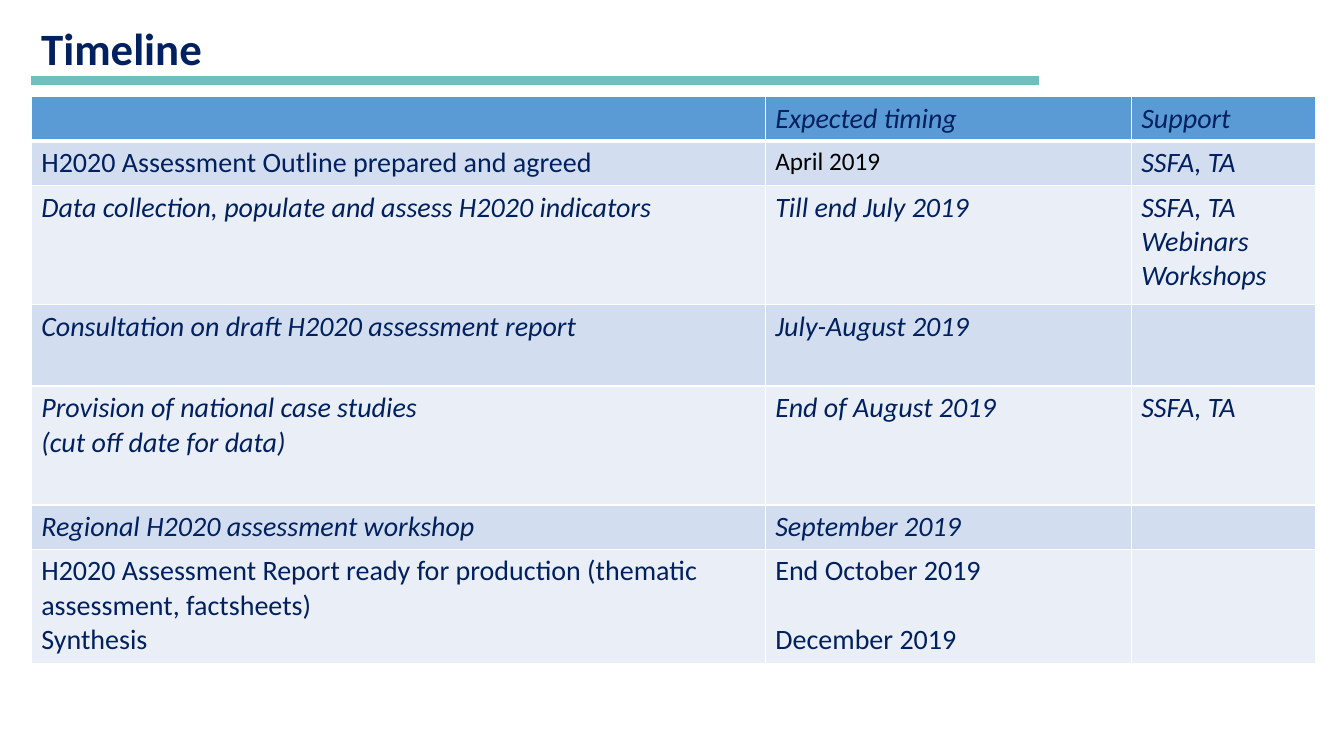
from lxml import etree
from pptx import Presentation
from pptx.dml.color import RGBColor
from pptx.enum.shapes import MSO_CONNECTOR
from pptx.oxml.ns import qn
from pptx.util import Inches, Pt

STRAIGHT = MSO_CONNECTOR.STRAIGHT
FONT = "Calibri"
COLORS = {
    "navy": "002060",
    "teal": "6FBFBD",
    "head": "5B9BD5",
    "dark": "D2DEEF",
    "light": "EAEFF7",
    "black": "000000",
    "white": "FFFFFF",
}
WIDTHS = [7.28, 3.63, 1.83]
HEIGHTS = [0.44, 0.44, 1.18, 0.81, 1.18, 0.44, 1.13]
ROWS = [
    ["", "Expected timing", "Support"],
    ["H2020 Assessment Outline prepared and agreed", "April 2019", "SSFA, TA"],
    ["Data collection, populate and assess H2020 indicators",
     "Till end July 2019", "SSFA, TA\nWebinars\nWorkshops"],
    ["Consultation on draft H2020 assessment report", "July-August 2019", ""],
    ["Provision of national case studies\n(cut off date for data)",
     "End of August 2019", "SSFA, TA"],
    ["Regional H2020 assessment workshop", "September 2019", ""],
    ["H2020 Assessment Report ready for production "
     "(thematic assessment, factsheets)\nSynthesis",
     "End October 2019\nDecember 2019", ""],
]
UPRIGHT = {(1, 0), (1, 1), (6, 0), (6, 1)}


def color(name):
    return RGBColor.from_string(COLORS[name])


def style(par, size, tint="navy", bold=False, italic=False):
    font = par.font
    font.name = FONT
    font.size = Pt(size)
    font.bold = bold
    font.italic = italic
    font.color.rgb = color(tint)


def add_title(slide, text):
    box = slide.shapes.add_textbox(
        Inches(0.31), Inches(0.22), Inches(12.44), Inches(0.58))
    box.text_frame.word_wrap = True
    par = box.text_frame.paragraphs[0]
    par.text = text
    par.line_spacing = 0.9
    style(par, 32, bold=True)


def add_rule(slide):
    rule = slide.shapes.add_connector(
        STRAIGHT, Inches(0.31), Inches(0.8), Inches(10.31), Inches(0.8))
    rule.line.color.rgb = color("teal")
    rule.line.width = Pt(6)
    etree.SubElement(rule._element.spPr, qn("a:effectLst"))


def add_edges(cell, base):
    props = cell._tc.get_or_add_tcPr()
    widths = {"lnL": 1, "lnR": 1, "lnT": 1, "lnB": base}
    for place, (tag, width) in enumerate(widths.items()):
        edge = etree.Element(qn(f"a:{tag}"), w=str(Pt(width)))
        fill = etree.SubElement(edge, qn("a:solidFill"))
        etree.SubElement(fill, qn("a:srgbClr"), val=COLORS["white"])
        props.insert(place, edge)


def fill_cell(cell, text, shade, size, tint, italic):
    cell.fill.solid()
    cell.fill.fore_color.rgb = color(shade)
    cell.text = text
    for par in cell.text_frame.paragraphs:
        style(par, size, tint, italic=italic)
    add_edges(cell, 3 if shade == "head" else 1)


def add_plan(slide):
    frame = slide.shapes.add_table(
        len(ROWS), len(WIDTHS), Inches(0.31), Inches(0.96),
        Inches(sum(WIDTHS)), Inches(sum(HEIGHTS)))
    table = frame.table
    table.first_row = False
    table.horz_banding = False
    for col, width in zip(table.columns, WIDTHS):
        col.width = Inches(width)
    for row, height in zip(table.rows, HEIGHTS):
        row.height = Inches(height)
    for r, texts in enumerate(ROWS):
        shade = "head" if r == 0 else ("light", "dark")[r % 2]
        for c, text in enumerate(texts):
            size, tint = (18, "black") if (r, c) == (1, 1) else (20, "navy")
            fill_cell(table.cell(r, c), text, shade, size, tint,
                      (r, c) not in UPRIGHT)
    table.cell(6, 1).text_frame.paragraphs[1].space_before = Pt(24.4)


def main():
    deck = Presentation()
    deck.slide_width = Inches(13.33)
    deck.slide_height = Inches(7.5)
    slide = deck.slides.add_slide(deck.slide_layouts[6])
    add_title(slide, "Timeline")
    add_rule(slide)
    add_plan(slide)
    deck.save("out.pptx")


if __name__ == "__main__":
    main()
